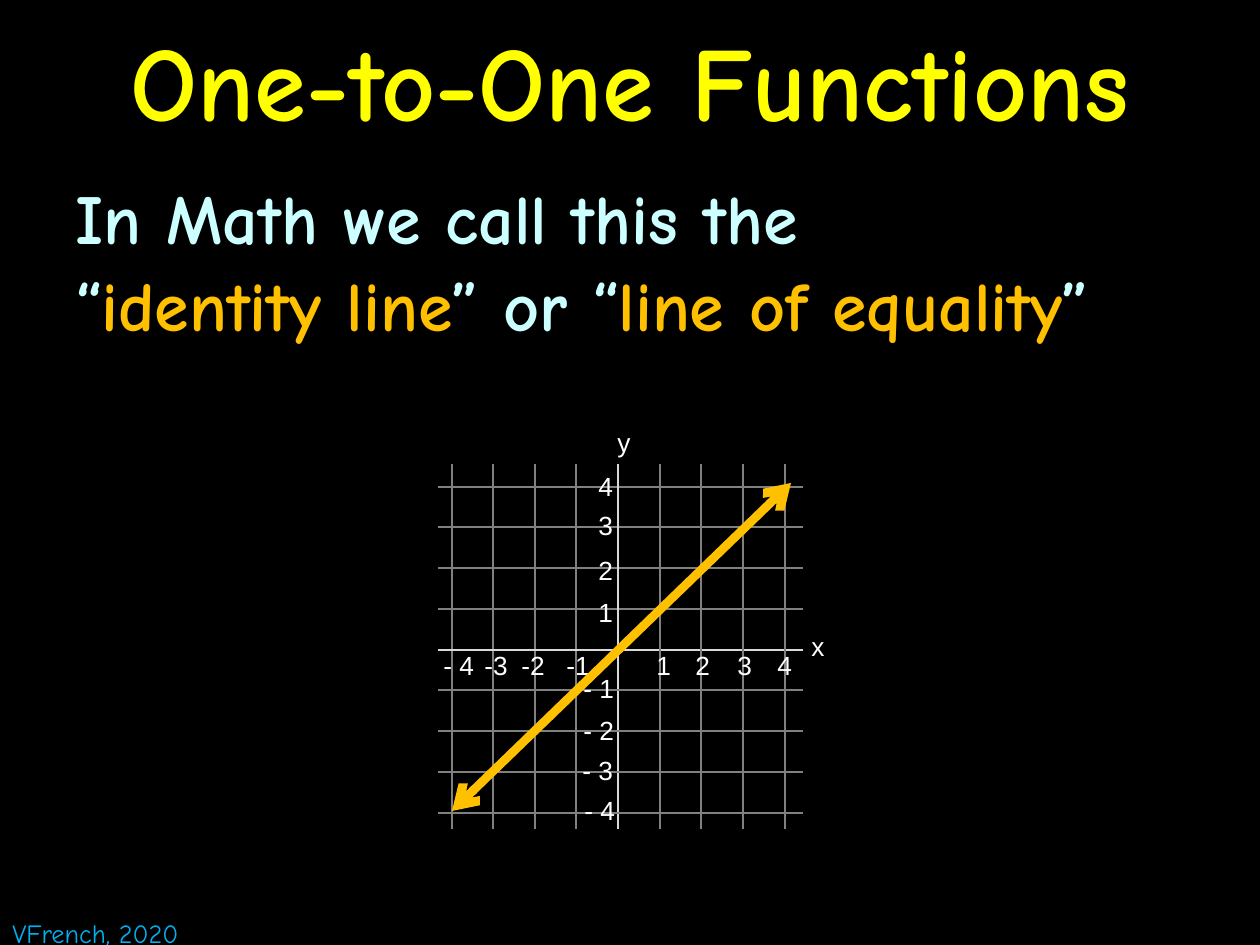
from dataclasses import dataclass

from lxml.etree import SubElement
from pptx import Presentation
from pptx.dml.color import RGBColor
from pptx.enum.shapes import MSO_CONNECTOR
from pptx.enum.text import MSO_ANCHOR, PP_ALIGN
from pptx.oxml.ns import qn
from pptx.util import Emu, Pt


@dataclass(frozen=True)
class Theme:
    back: str = "000000"
    title: str = "FFFF00"
    body: str = "CCFFFF"
    accent: str = "FFC000"
    axis: str = "D9D9D9"
    grid: str = "808080"
    label: str = "FFFFFF"
    credit: str = "00B0F0"
    display: str = "Comic Neue"
    plain: str = "Arial"
    title_size: int = 60
    body_size: int = 40
    small_size: int = 15
    thin: float = 0.75
    thick: float = 5


@dataclass(frozen=True)
class Label:
    text: str
    x: int
    y: int
    w: int = 60


@dataclass(frozen=True)
class Span:
    text: str
    color: str


T = Theme()
TICKS = (-4, -3, -2, -1, 0, 1, 2, 3, 4)
GRID_LEFT, GRID_TOP, GRID_SIZE = 438, 464, 365
FIRST_X, SPAN_X = 452, 333
FIRST_Y, SPAN_Y = 487, 326
X_ROW = 643

LABELS = (
    Label("4", 586, 464), Label("3", 586, 503), Label("2", 586, 548), Label("1", 586, 590),
    Label("- 1", 571, 666), Label("- 2", 571, 708), Label("- 3", 570, 748), Label("- 4", 572, 788),
    Label("- 4", 431, X_ROW), Label("-3", 472, X_ROW), Label("-2", 509, X_ROW), Label("-1", 554, X_ROW),
    Label("1", 644, X_ROW), Label("2", 683, X_ROW), Label("3", 725, X_ROW), Label("4", 765, X_ROW),
    Label("y", 605, 420), Label("x", 799, 624),
)


def px(n: int) -> Emu:
    """Turn pixels into EMU."""
    return Emu(round(n * 914400 / 126))


def apply(obj, values: dict) -> None:
    """Set each named attribute on an object."""
    for name, value in values.items():
        setattr(obj, name, value)


def add_text(s, box: tuple[int, int, int, int], lines: list[list[Span]], font: dict,
             frame: dict | None = None, para: dict | None = None) -> None:
    """Add a text box with one paragraph for each line of spans."""
    tf = s.shapes.add_textbox(*map(px, box)).text_frame
    apply(tf, {"word_wrap": True, **(frame or {})})
    for i, spans in enumerate(lines):
        p = tf.paragraphs[0] if i == 0 else tf.add_paragraph()
        apply(p, para or {})
        for span in spans:
            r = p.add_run()
            r.text = span.text
            apply(r.font, font)
            r.font.color.rgb = RGBColor.from_string(span.color)


def add_line(s, start: tuple[int, int], end: tuple[int, int], color: str,
             width: float, arrows: bool = False) -> None:
    """Add a straight line, with open arrowheads at both ends if wanted."""
    sp = s.shapes.add_connector(MSO_CONNECTOR.STRAIGHT, *map(px, start + end))
    sp.line.color.rgb = RGBColor.from_string(color)
    sp.line.width = Pt(width)
    if arrows:
        for tag in ("a:headEnd", "a:tailEnd"):
            SubElement(sp.line._get_or_add_ln(), qn(tag), type="arrow")
    SubElement(sp._element.spPr, qn("a:effectLst"))


def add_graph(s) -> None:
    """Draw the grid, its labels and the identity line."""
    for i, tick in enumerate(TICKS):
        color = T.grid if tick else T.axis
        x = FIRST_X + SPAN_X * i // (len(TICKS) - 1)
        y = FIRST_Y + SPAN_Y * i // (len(TICKS) - 1)
        add_line(s, (x, GRID_TOP), (x, GRID_TOP + GRID_SIZE), color, T.thin)
        add_line(s, (GRID_LEFT, y), (GRID_LEFT + GRID_SIZE, y), color, T.thin)
    for label in LABELS:
        add_text(s, (label.x, label.y, label.w, 44), [[Span(label.text, T.label)]],
                 {"name": T.plain, "size": Pt(T.small_size)})
    add_line(s, (791, 483), (452, 811), T.accent, T.thick, arrows=True)


def main() -> None:
    """Build the slide and save it."""
    prs = Presentation()
    apply(prs, {"slide_width": px(1260), "slide_height": px(945)})
    s = prs.slides.add_slide(prs.slide_layouts[6])
    s.background.fill.solid()
    s.background.fill.fore_color.rgb = RGBColor.from_string(T.back)
    add_text(s, (0, 0, 1260, 158), [[Span("One-to-One Functions", T.title)]],
             {"name": T.display, "size": Pt(T.title_size), "bold": True},
             {"vertical_anchor": MSO_ANCHOR.MIDDLE}, {"alignment": PP_ALIGN.CENTER})
    add_text(s, (63, 168, 1197, 777), [
        [Span("In Math we call this the", T.body)],
        [Span("“", T.body), Span("identity line", T.accent), Span("” or “", T.body),
         Span("line of equality", T.accent), Span("”", T.body)],
    ], {"name": T.display, "size": Pt(T.body_size), "bold": True}, para={"space_before": Pt(2)})
    add_graph(s)
    add_text(s, (0, 911, 209, 44), [[Span("VFrench, 2020", T.credit)]],
             {"name": T.display, "size": Pt(T.small_size)}, {"word_wrap": False})
    prs.save("out.pptx")


if __name__ == "__main__":
    main()
